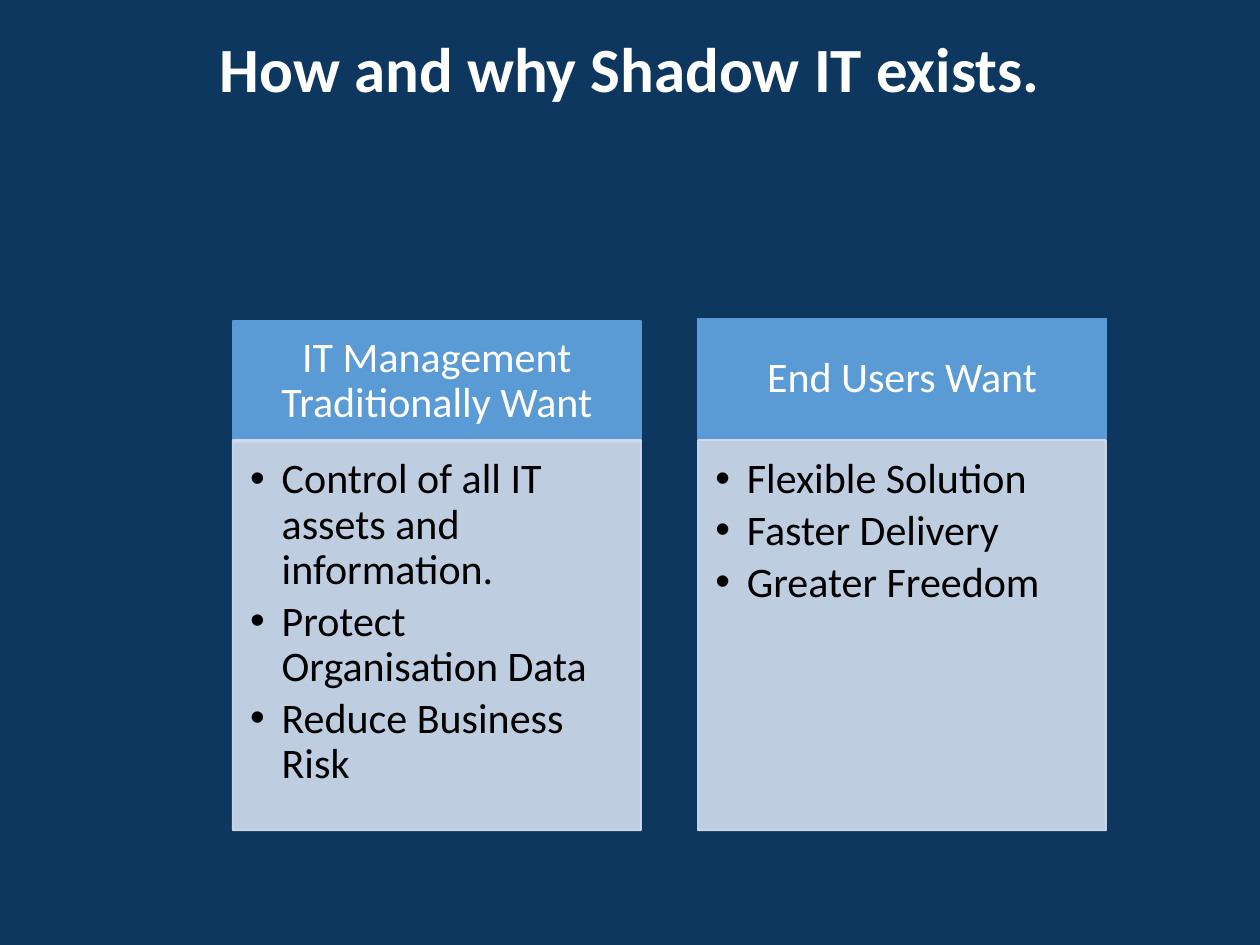
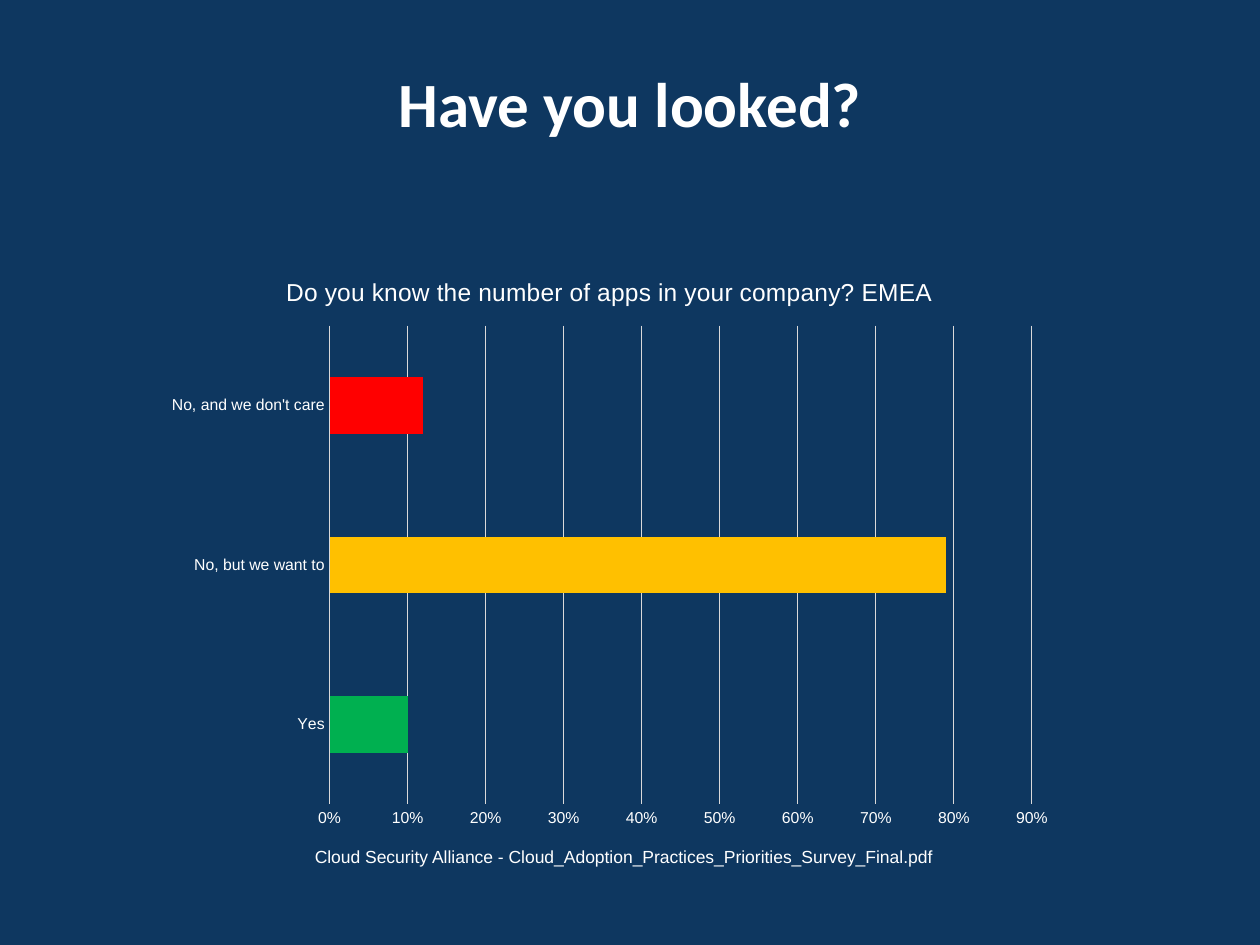
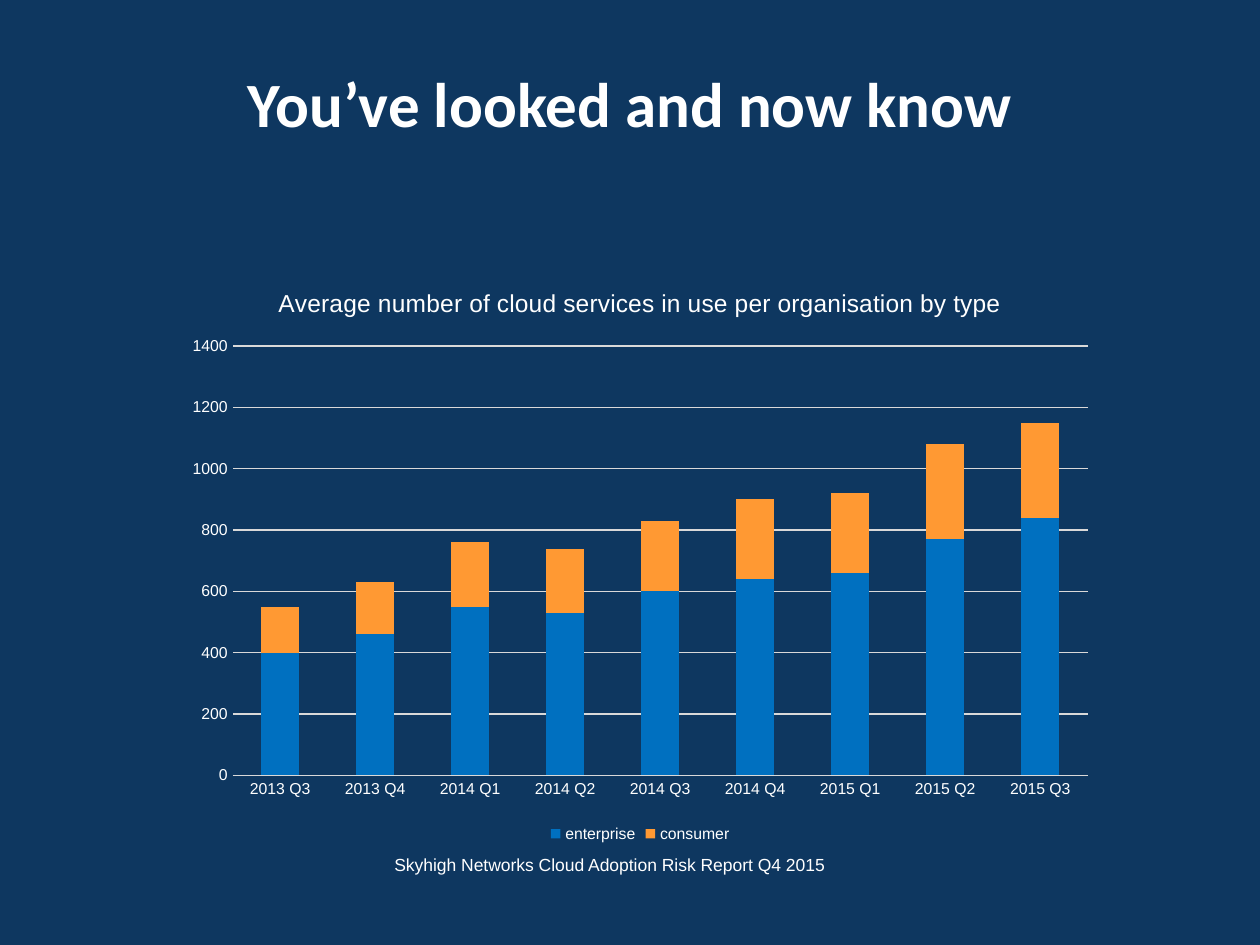
from lxml import etree
from pptx import Presentation
from pptx.chart.data import CategoryChartData
from pptx.dml.color import RGBColor
from pptx.enum.chart import XL_CHART_TYPE, XL_LEGEND_POSITION, XL_TICK_MARK
from pptx.enum.shapes import MSO_SHAPE
from pptx.enum.text import MSO_ANCHOR, PP_ALIGN
from pptx.oxml.ns import qn
from pptx.util import Pt

BAR = XL_CHART_TYPE.BAR_CLUSTERED
STACKED_COLUMN = XL_CHART_TYPE.COLUMN_STACKED
LEGEND_BOTTOM = XL_LEGEND_POSITION.BOTTOM
NO_TICK = XL_TICK_MARK.NONE
RECTANGLE = MSO_SHAPE.RECTANGLE
TOP, MIDDLE = MSO_ANCHOR.TOP, MSO_ANCHOR.MIDDLE
LEFT, CENTER = PP_ALIGN.LEFT, PP_ALIGN.CENTER

NAVY, WHITE, BLACK = "0E3760", "FFFFFF", "000000"
HEADER_BLUE, PANEL_BLUE, GRID_GREY = "5B9BD5", "D2DEEF", "D9D9D9"

TITLE_FONT = {"name": "Calibri", "size": Pt(36), "bold": True, "color": WHITE}
HEADER_FONT = {"name": "Calibri", "size": Pt(24), "color": WHITE}
BULLET_FONT = {"name": "Calibri", "size": Pt(24), "color": BLACK}
SOURCE_FONT = {"name": "Arial", "size": Pt(10), "color": WHITE}
CHART_FONT = {"name": "Arial", "size": Pt(10), "color": BLACK}
AXIS_FONT = {"name": "Arial", "size": Pt(9), "color": WHITE}
CHART_TITLE_FONT = {"name": "Arial", "size": Pt(14), "bold": False, "color": WHITE}

TITLE_BOX = (36, 18.72, 648, 79.2)
RAISED_TITLE_BOX = (36, 16.5, 648, 44)


def rgb(value):
    return RGBColor.from_string(value)


def set_font(font, values):
    for name, value in values.items():
        if name == "color":
            font.color.rgb = rgb(value)
        else:
            setattr(font, name, value)


def set_line(line, color, width):
    line.color.rgb = rgb(color)
    line.width = Pt(width)


def add_slide(presentation, title, title_box=TITLE_BOX):
    slide = presentation.slides.add_slide(presentation.slide_layouts[6])
    slide.background.fill.solid()
    slide.background.fill.fore_color.rgb = rgb(NAVY)
    add_text(slide, title_box, title, TITLE_FONT, CENTER, MIDDLE)
    return slide


def add_text(slide, box, text, font, alignment=LEFT, anchor=TOP):
    shape = slide.shapes.add_textbox(*map(Pt, box))
    frame = shape.text_frame
    frame.word_wrap = True
    frame.vertical_anchor = anchor
    paragraph = frame.paragraphs[0]
    paragraph.text = text
    paragraph.alignment = alignment
    set_font(paragraph.font, font)


def add_block(slide, box, color, margins, anchor):
    shape = slide.shapes.add_shape(RECTANGLE, *map(Pt, box))
    shape.shadow.inherit = False
    shape.fill.solid()
    shape.fill.fore_color.rgb = rgb(color)
    set_line(shape.line, color, 1)
    frame = shape.text_frame
    frame.word_wrap = True
    frame.vertical_anchor = anchor
    for side, margin in zip(("left", "top", "right", "bottom"), margins):
        setattr(frame, f"margin_{side}", Pt(margin))
    return shape


def set_opacity(shape, percent):
    for color in shape._element.spPr.iter(qn("a:srgbClr")):
        etree.SubElement(color, qn("a:alpha"), val=str(percent * 1000))


def add_bullet(paragraph, indent):
    properties = paragraph._p.get_or_add_pPr()
    properties.set("marL", str(Pt(indent)))
    properties.set("indent", str(-Pt(indent)))
    etree.SubElement(properties, qn("a:buFont"), typeface="Arial")
    etree.SubElement(properties, qn("a:buChar"), char="•")


def add_wish_list(slide, box, header_height, heading, wishes):
    left, top, width, height = box
    header = add_block(slide, (left, top, width, header_height), HEADER_BLUE,
                       (13.5, 8, 13.5, 8), MIDDLE)
    paragraph = header.text_frame.paragraphs[0]
    paragraph.text = heading
    paragraph.alignment = CENTER
    paragraph.line_spacing = 0.9
    set_font(paragraph.font, HEADER_FONT)

    panel_top = 251.5
    panel = add_block(slide, (left, panel_top, width, top + height - panel_top),
                      PANEL_BLUE, (10, 10, 13.5, 15), TOP)
    set_opacity(panel, 90)
    frame = panel.text_frame
    for index, wish in enumerate(wishes):
        paragraph = frame.add_paragraph() if index else frame.paragraphs[0]
        add_bullet(paragraph, 18)
        paragraph.text = wish
        paragraph.alignment = LEFT
        paragraph.line_spacing = 0.9
        paragraph.space_after = Pt(3.6)
        set_font(paragraph.font, BULLET_FONT)


def add_chart(slide, box, kind, title, categories, series, maximum, step,
              gap, number_format="General"):
    data = CategoryChartData(number_format=number_format)
    data.categories = categories
    for name, values, _ in series:
        data.add_series(name, values)
    chart = slide.shapes.add_chart(kind, *map(Pt, box), data).chart
    set_font(chart.font, CHART_FONT)
    chart.has_legend = False
    chart.has_title = True
    chart.chart_title.include_in_layout = False
    paragraph = chart.chart_title.text_frame.paragraphs[0]
    paragraph.text = title
    set_font(paragraph.runs[0].font, CHART_TITLE_FONT)

    plot = chart.plots[0]
    plot.gap_width = gap
    plot.vary_by_categories = False
    for bars, (_, _, color) in zip(plot.series, series):
        bars.format.fill.solid()
        bars.format.fill.fore_color.rgb = rgb(color)

    for axis in (chart.category_axis, chart.value_axis):
        axis.major_tick_mark = axis.minor_tick_mark = NO_TICK
        set_font(axis.tick_labels.font, AXIS_FONT)
    chart.category_axis.has_major_gridlines = False
    set_line(chart.category_axis.format.line, GRID_GREY, 0.75)
    value_axis = chart.value_axis
    value_axis.minimum_scale = 0
    value_axis.maximum_scale = maximum
    value_axis.major_unit = step
    value_axis.format.line.fill.background()
    value_axis.has_major_gridlines = True
    set_line(value_axis.major_gridlines.format.line, GRID_GREY, 0.75)
    value_axis.tick_labels.number_format = number_format
    value_axis.tick_labels.number_format_is_linked = False
    return chart


def build_reasons(presentation):
    slide = add_slide(presentation, "How and why Shadow IT exists.", RAISED_TITLE_BOX)
    bottom = 474.5
    columns = [
        (183.5, "IT Management Traditionally Want",
         ["Control of all IT assets and information.",
          "Protect Organisation Data", "Reduce Business Risk"]),
        (182, "End Users Want",
         ["Flexible Solution", "Faster Delivery", "Greater Freedom"]),
    ]
    for index, (top, heading, wishes) in enumerate(columns):
        box = (133 + index * 265.8, top, 233.3, bottom - top)
        add_wish_list(slide, box, 69, heading, wishes)


def build_app_survey(presentation):
    slide = add_slide(presentation, "Have you looked?")
    answers = [("Yes", 0.1, "00B050"), ("No, but we want to", 0.79, "FFC000"),
               ("No, and we don't care", 0.12, "FF0000")]
    names, shares, colors = zip(*answers)
    chart = add_chart(slide, (87.8, 144.7, 521.3, 334.8), BAR,
                      "Do you know the number of apps in your company? EMEA",
                      names, [("Series 1", shares, "BBE0E3")], 0.9, 0.1, 182, "0%")
    for index, color in enumerate(colors):
        fill = chart.plots[0].series[0].points[index].format.fill
        fill.solid()
        fill.fore_color.rgb = rgb(color)
    add_text(slide, (172.8, 480.2, 408.2, 19.4),
             "Cloud Security Alliance - Cloud_Adoption_Practices_Priorities_Survey_Final.pdf",
             SOURCE_FONT)


def build_cloud_services(presentation):
    slide = add_slide(presentation, "You’ve looked and now know")
    add_text(slide, (218.2, 484.6, 272.2, 19.4),
             "Skyhigh Networks Cloud Adoption Risk Report Q4 2015", SOURCE_FONT)
    quarters = ["2013 Q3", "2013 Q4", "2014 Q1", "2014 Q2", "2014 Q3",
                "2014 Q4", "2015 Q1", "2015 Q2", "2015 Q3"]
    services = [
        ("enterprise", [400, 460, 550, 530, 600, 640, 660, 770, 840], "0070C0"),
        ("consumer", [150, 170, 210, 210, 230, 260, 260, 310, 310], "FF9933"),
    ]
    chart = add_chart(slide, (99.4, 151.2, 532.8, 333.4), STACKED_COLUMN,
                      "Average number of cloud services in use per organisation by type",
                      quarters, services, 1400, 200, 150)
    chart.plots[0].overlap = 100
    chart.has_legend = True
    chart.legend.position = LEGEND_BOTTOM
    chart.legend.include_in_layout = False
    set_font(chart.legend.font, AXIS_FONT)


def main():
    presentation = Presentation()
    presentation.slide_width, presentation.slide_height = Pt(720), Pt(540)
    build_reasons(presentation)
    build_app_survey(presentation)
    build_cloud_services(presentation)
    presentation.save("out.pptx")


if __name__ == "__main__":
    main()
